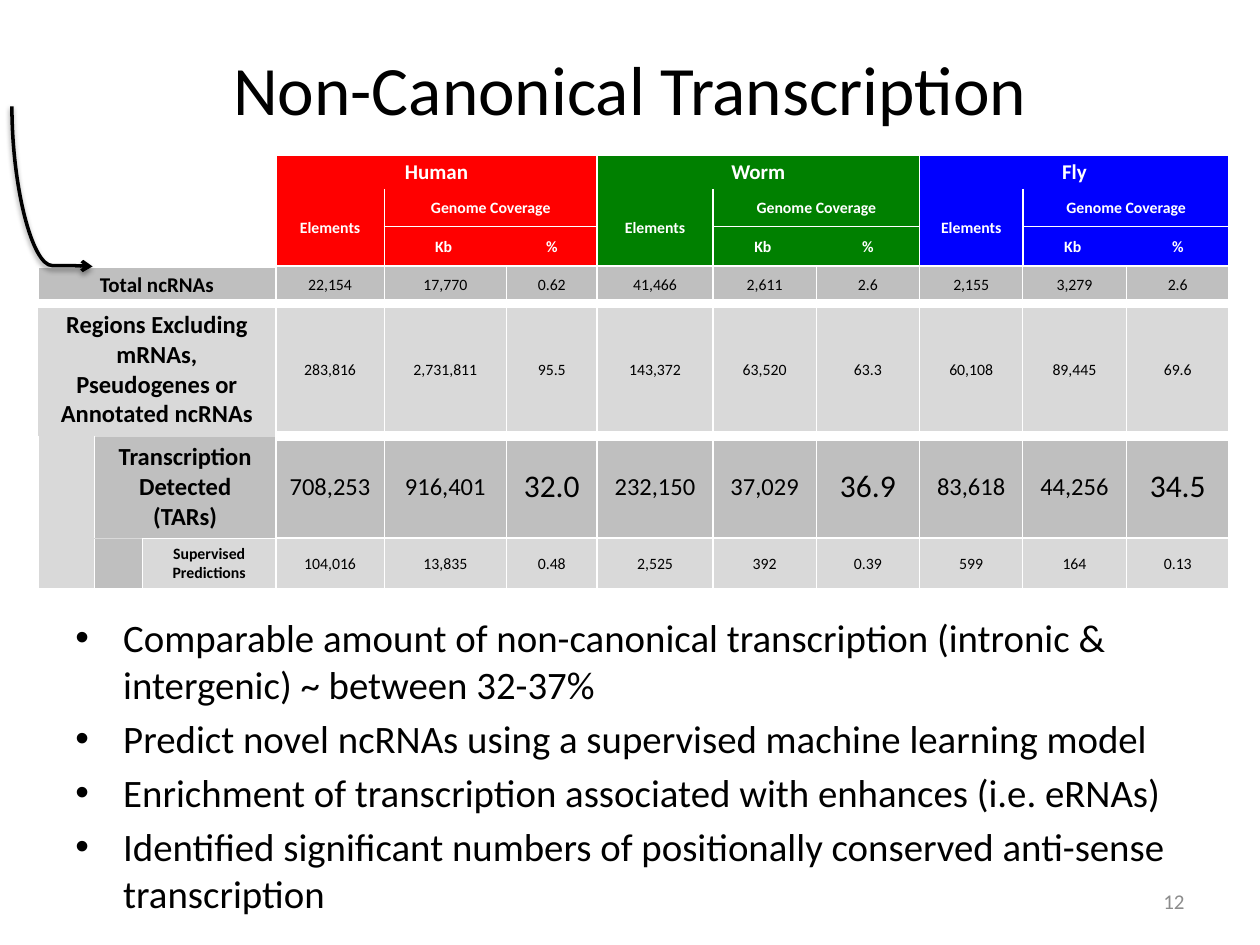
"""Build the Non-Canonical Transcription slide with its ncRNA coverage table."""
import pptx
import pptx.dml.color
import pptx.enum.shapes
import pptx.enum.text
import pptx.oxml
import pptx.oxml.ns
import pptx.util

Inches, Pt = pptx.util.Inches, pptx.util.Pt
ALIGN, ANCHOR = pptx.enum.text.PP_ALIGN, pptx.enum.text.MSO_ANCHOR
NAMESPACE = pptx.oxml.ns.nsdecls("a")
COLORS = {"black": "000000", "white": "FFFFFF", "number": "8C8C8C", "dark": "BFBFBF",
          "light": "D9D9D9", "Human": "FF0000", "Worm": "008000", "Fly": "0000FF"}


def style_text(frame, size, color="black", bold=False, align=ALIGN.CENTER):
    for para in frame.paragraphs:
        para.alignment = align
        for span in para.runs:
            span.font.name, span.font.size, span.font.bold = "Calibri", Pt(size), bold
            span.font.color.rgb = pptx.dml.color.RGBColor.from_string(COLORS[color])


def format_cell(cell, text, fill, borders, size=9, color="black", bold=False, tight=True):
    cell.text = text
    cell.vertical_anchor = ANCHOR.MIDDLE
    style_text(cell.text_frame, size, color, bold)
    if tight:
        cell.margin_left = cell.margin_right = cell.margin_top = Inches(0.01)
        cell.margin_bottom = 0
    if fill:
        cell.fill.solid()
        cell.fill.fore_color.rgb = pptx.dml.color.RGBColor.from_string(COLORS[fill])
    sides = [side for side in "LRTB" if side in borders]
    for position, side in enumerate(sides):
        width, line_color = borders[side]
        cell._tc.get_or_add_tcPr().insert(position, pptx.oxml.parse_xml(
            f'<a:ln{side} {NAMESPACE} w="{Pt(width)}"><a:solidFill>'
            f'<a:srgbClr val="{COLORS[line_color]}"/></a:solidFill></a:ln{side}>'))


deck = pptx.Presentation()
deck.slide_width, deck.slide_height = Inches(10), Inches(7.5)
page = deck.slides.add_slide(deck.slide_layouts[5])

title = page.shapes.title
title.left, title.top, title.width, title.height = map(Inches, (0.5, 0.3, 9, 0.79))
title.text_frame.text = "Non-Canonical Transcription"
title.text_frame.vertical_anchor = ANCHOR.MIDDLE
style_text(title.text_frame, 39.6)

number_box = page.shapes.add_textbox(Inches(7.17), Inches(6.95), Inches(2.33), Inches(0.4))
number_box.text_frame.word_wrap = True
number_box.text_frame.text = "12"
number_box.text_frame.vertical_anchor = ANCHOR.MIDDLE
style_text(number_box.text_frame, 12, "number", align=ALIGN.RIGHT)

column_widths = [0.45, 0.38, 1.06, 0.86, 0.97, 0.72, 0.92] + [0.82] * 5
row_heights = [0.27, 0.3, 0.26, 0.3, 1.05, 0.81, 0.4]
table_frame = page.shapes.add_table(len(row_heights), len(column_widths), Inches(0.3), Inches(1.23),
                                    Inches(sum(column_widths)), Inches(sum(row_heights)))
table = table_frame.table
table.first_row = table.horz_banding = False
table._tbl.tblPr.find(pptx.oxml.ns.qn("a:tableStyleId")).text = "{2D5ABB26-0587-4C30-8999-92F81FD0307C}"
for column, width in zip(table.columns, column_widths):
    column.width = Inches(width)
for row, height in zip(table.rows, row_heights):
    row.height = Inches(height)

thin, hair, hidden = (1, "white"), (0.5, "white"), (0.5, "light")
thick, edge = (6, "white"), (2.25, "white")

table.cell(0, 0).merge(table.cell(2, 2))
format_cell(table.cell(0, 0), "", None, {"L": thin, "R": thin, "T": thin, "B": (3, "white")})
for index, species in enumerate(["Human", "Worm", "Fly"]):
    first = 3 + 3 * index
    right = edge if species == "Fly" else thin
    headings = [
        (0, first, 0, first + 2, species, 12, {"L": thin, "T": thin, "R": right}),
        (1, first, 2, first, "Elements", 9, {"L": thin, "B": thin}),
        (1, first + 1, 1, first + 2, "Genome Coverage", 9, {"R": right, "B": thin}),
        (2, first + 1, 2, first + 1, "Kb ", 9, {"T": thin, "B": thin}),
        (2, first + 2, 2, first + 2, "%", 9, {"T": thin, "R": right, "B": thin}),
    ]
    for top, left, bottom, last, text, size, borders in headings:
        if (top, left) != (bottom, last):
            table.cell(top, left).merge(table.cell(bottom, last))
        format_cell(table.cell(top, left), text, species, borders, size, "white", True)

labels = [
    (3, 0, 3, 2, "Total ncRNAs", 12, "dark", {"L": thin, "T": thin, "R": thin, "B": thick}),
    (4, 0, 4, 2, "Regions Excluding mRNAs, Pseudogenes or Annotated ncRNAs", 14, "light",
     {"L": hair, "T": thick, "R": thin, "B": hidden}),
    (5, 0, 6, 0, "", 9, "light", {"L": thin, "T": hidden, "R": hair, "B": thin}),
    (5, 1, 5, 2, "Transcription\nDetected (TARs)", 14, "dark",
     {"L": hair, "T": hidden, "R": thin, "B": hidden}),
    (6, 1, 6, 1, "", 9, "dark", {"L": hair, "T": hidden, "R": hair, "B": thin}),
    (6, 2, 6, 2, "Supervised Predictions", 9, "light", {"L": hair, "T": hair, "R": thin, "B": hair}),
]
for top, left, bottom, last, text, size, fill, borders in labels:
    if (top, left) != (bottom, last):
        table.cell(top, left).merge(table.cell(bottom, last))
    format_cell(table.cell(top, left), text, fill, borders, size, bold=True, tight=False)

data_rows = [
    ("dark", thin, thick, "22,154 17,770 0.62 41,466 2,611 2.6 2,155 3,279 2.6"),
    ("light", thick, thick, "283,816 2,731,811 95.5 143,372 63,520 63.3 60,108 89,445 69.6"),
    ("dark", thick, thin, "708,253 916,401 32.0 232,150 37,029 36.9 83,618 44,256 34.5"),
    ("light", thin, thin, "104,016 13,835 0.48 2,525 392 0.39 599 164 0.13"),
]
for row_index, (fill, above, below, values) in enumerate(data_rows, 3):
    detected = row_index == 5
    for column_index, value in enumerate(values.split(), 3):
        percent = column_index % 3 == 2
        borders = {"L": hair if column_index > 9 else thin, "T": above, "B": below,
                   "R": edge if column_index == 11 else hair if column_index > 8 else thin}
        size = (18 if percent else 14) if detected else 9
        format_cell(table.cell(row_index, column_index), value, fill, borders, size, tight=not detected)

body = page.shapes.add_textbox(Inches(0.5), Inches(4.82), Inches(9), Inches(2.42))
body.text_frame.word_wrap = True
body.text_frame.text = "\n".join([
    "Comparable amount of non-canonical transcription (intronic & intergenic) ~ between 32-37%",
    "Predict novel ncRNAs using a supervised machine learning model",
    "Enrichment of transcription associated with enhances (i.e. eRNAs)",
    "Identified significant numbers of positionally conserved anti-sense transcription",
])
style_text(body.text_frame, 22.2, align=ALIGN.LEFT)
for para in body.text_frame.paragraphs:
    para.space_before = Pt(4.4)
    properties = para._p.get_or_add_pPr()
    properties.set("marL", str(Inches(0.38)))
    properties.set("indent", str(Inches(-0.38)))
    properties.append(pptx.oxml.parse_xml(f'<a:buFont {NAMESPACE} typeface="Arial"/>'))
    properties.append(pptx.oxml.parse_xml(f'<a:buChar {NAMESPACE} char="•"/>'))

arrow = page.shapes.add_connector(pptx.enum.shapes.MSO_CONNECTOR.CURVE,
                                  Inches(-0.22), Inches(1.16), Inches(1.05), Inches(1.8))
arrow.line.width = Pt(2)
arrow.line.color.rgb = pptx.dml.color.RGBColor.from_string(COLORS["black"])
arrow.line._get_or_add_ln().append(pptx.oxml.parse_xml(f'<a:tailEnd {NAMESPACE} type="arrow"/>'))
arrow_properties = arrow._element.spPr
arrow_properties.xfrm.set("rot", str(270 * 60000))
arrow_properties.xfrm.set("flipH", "1")
arrow_properties.find(pptx.oxml.ns.qn("a:prstGeom")).get_or_add_avLst().append(
    pptx.oxml.parse_xml(f'<a:gd {NAMESPACE} name="adj1" fmla="val 99500"/>'))
arrow_properties.append(pptx.oxml.parse_xml(
    f'<a:effectLst {NAMESPACE}><a:outerShdw blurRad="{Pt(3.1)}" dist="{Pt(1.6)}" dir="5400000" rotWithShape="0">'
    f'<a:srgbClr val="{COLORS["black"]}"><a:alpha val="38000"/></a:srgbClr></a:outerShdw></a:effectLst>'))

deck.save("out.pptx")
